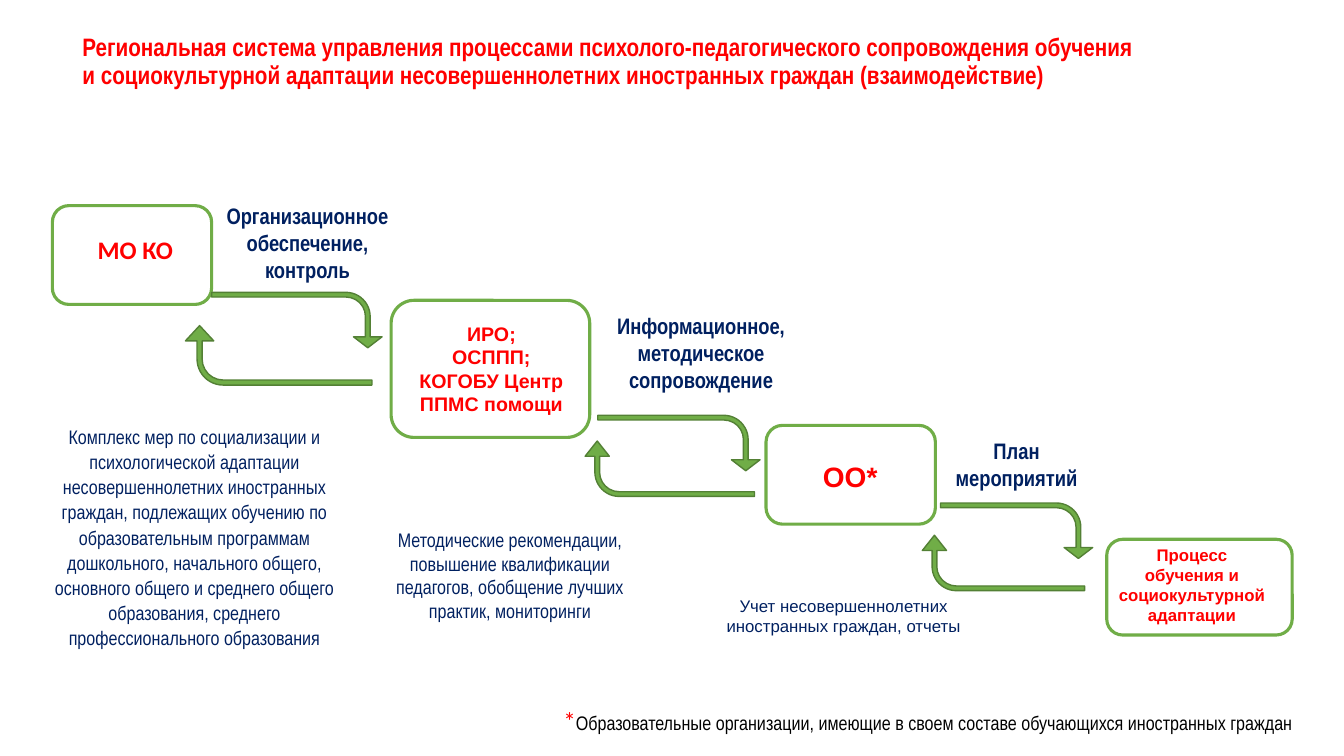
"""Build the slide on the regional management system for support and adaptation."""
from dataclasses import dataclass

import pptx
import pptx.dml.color
import pptx.enum.shapes
import pptx.enum.text
import pptx.util


@dataclass(frozen=True)
class Theme:
    red: str = "FF0000"
    navy: str = "002060"
    black: str = "000000"
    green: str = "70AD47"
    dark_green: str = "538035"
    narrow: str = "Arial Narrow"
    wide: str = "Arial"
    plain: str = "Calibri"
    heading: int = 18
    key: int = 20
    label: int = 16
    body: int = 14
    small: int = 12
    frame_line: float = 2.25
    arrow_line: float = 1


class SlideBuilder:
    COLUMNS = 80
    ROWS = 45
    FORWARD = (0.085, 0.258, 0.197, 0.438)
    BACK = (0.085, 0.219, 0.275, 0.438)

    def __init__(self, presentation, theme):
        self.theme = theme
        self.column = presentation.slide_width / self.COLUMNS
        self.row = presentation.slide_height / self.ROWS
        self.slide = presentation.slides.add_slide(presentation.slide_layouts[6])

    def place(self, area):
        units = (self.column, self.row) * 2
        return [round(length * unit) for length, unit in zip(area, units)]

    def color(self, value):
        return pptx.dml.color.RGBColor.from_string(value)

    def outlined(self, kind, area, line_color, line_width):
        shape = self.slide.shapes.add_shape(kind, *self.place(area))
        shape.shadow.inherit = False
        shape.line.color.rgb = self.color(line_color)
        shape.line.width = pptx.util.Pt(line_width)
        return shape

    def frame(self, area):
        kind = pptx.enum.shapes.MSO_SHAPE.ROUNDED_RECTANGLE
        shape = self.outlined(kind, area, self.theme.green, self.theme.frame_line)
        shape.fill.background()

    def arrow(self, area, rotation, adjustments):
        kind = pptx.enum.shapes.MSO_SHAPE.BENT_ARROW
        shape = self.outlined(kind, area, self.theme.dark_green, self.theme.arrow_line)
        shape.fill.solid()
        shape.fill.fore_color.rgb = self.color(self.theme.green)
        shape.rotation = rotation
        for index, value in enumerate(adjustments):
            shape.adjustments[index] = value

    def style_run(self, run, size, font, color, bold=False):
        run.font.size = pptx.util.Pt(size)
        run.font.name = font
        run.font.color.rgb = self.color(color)
        run.font.bold = bold

    def text(self, area, content, style, centered=True, spacing=None):
        text_frame = self.slide.shapes.add_textbox(*self.place(area)).text_frame
        text_frame.word_wrap = True
        text_frame.text = content
        for paragraph in text_frame.paragraphs:
            if centered:
                paragraph.alignment = pptx.enum.text.PP_ALIGN.CENTER
            if spacing:
                paragraph.line_spacing = spacing
            for run in paragraph.runs:
                self.style_run(run, *style)
        return text_frame

    def footnote(self, area, mark, content):
        theme = self.theme
        text_frame = self.text(
            area, mark, (theme.heading, theme.plain, theme.red), centered=False)
        text_frame.word_wrap = False
        run = text_frame.paragraphs[0].add_run()
        run.text = content
        self.style_run(run, theme.body, theme.narrow, theme.black)


def main():
    presentation = pptx.Presentation()
    presentation.slide_width = pptx.util.Inches(13.33)
    presentation.slide_height = pptx.util.Inches(7.5)
    theme = Theme()
    builder = SlideBuilder(presentation, theme)

    title = (theme.heading, theme.narrow, theme.red, True)
    label = (theme.label, theme.narrow, theme.navy, True)
    body = (theme.body, theme.narrow, theme.navy)

    builder.text(
        (4.32, 1.8, 64.44, 8.7),
        "Региональная система управления процессами психолого-педагогического "
        "сопровождения обучения и социокультурной адаптации несовершеннолетних "
        "иностранных граждан (взаимодействие)",
        title, centered=False, spacing=0.9)

    for area in (
        (3.12, 12.24, 9.48, 5.88),
        (23.28, 17.88, 11.82, 8.16),
        (45.6, 25.32, 10.08, 5.88),
        (65.88, 32.1, 11.04, 5.7),
    ):
        builder.frame(area)

    for area in (
        (16.02, 13.98, 3.3, 10.14),
        (38.76, 21.54, 3.3, 9.66),
        (58.86, 27.06, 3.3, 9.06),
    ):
        builder.arrow(area, 90, builder.FORWARD)

    for area, adjustments in (
        ((14.82, 15.6, 3.54, 11.1), (0.085, 0.238, 0.256, 0.438)),
        ((38.22, 22.86, 3.3, 10.08), builder.BACK),
        ((58.08, 28.68, 3.3, 9.66), builder.BACK),
    ):
        builder.arrow(area, 270, adjustments)

    builder.text((5.22, 13.68, 7.38, 2.4), "МО КО",
                 (theme.heading, theme.plain, theme.red, True), centered=False)
    for area, content, size in (
        ((23.64, 18.84, 11.22, 6.24),
         "ИРО;\nОСППП;\nКОГОБУ Центр ППМС помощи", theme.body),
        ((46.02, 27.06, 9.18, 2.64), "ОО*", theme.key),
        ((65.88, 32.1, 10.14, 5.46),
         "Процесс обучения и социокультурной адаптации", theme.small),
    ):
        builder.text(area, content, (size, theme.wide, theme.red, True))

    for area, content in (
        ((12.6, 11.76, 11.4, 5.46), "Организационное обеспечение, контроль"),
        ((35.58, 18.3, 12.3, 5.46), "Информационное, методическое сопровождение"),
        ((55.56, 25.74, 9.9, 3.84), "План мероприятий"),
    ):
        builder.text(area, content, label)

    builder.text(
        (1.38, 24.9, 20.4, 15.66),
        "Комплекс мер по социализации и психологической адаптации "
        "несовершеннолетних иностранных граждан, подлежащих обучению по "
        "образовательным программам дошкольного, начального общего, основного "
        "общего и среднего общего образования, среднего профессионального "
        "образования",
        body, spacing=1.07)
    builder.text(
        (22.14, 31.14, 16.44, 6.24),
        "Методические рекомендации, повышение квалификации педагогов, "
        "обобщение лучших практик, мониторинги",
        body)
    builder.text(
        (42.48, 35.16, 15.48, 3),
        "Учет несовершеннолетних иностранных граждан, отчеты",
        (theme.small, theme.wide, theme.navy))

    builder.footnote(
        (32.94, 41.7, 45.24, 2.4), "*",
        "Образовательные организации, имеющие в своем составе обучающихся "
        "иностранных граждан")

    presentation.save("out.pptx")


if __name__ == "__main__":
    main()
